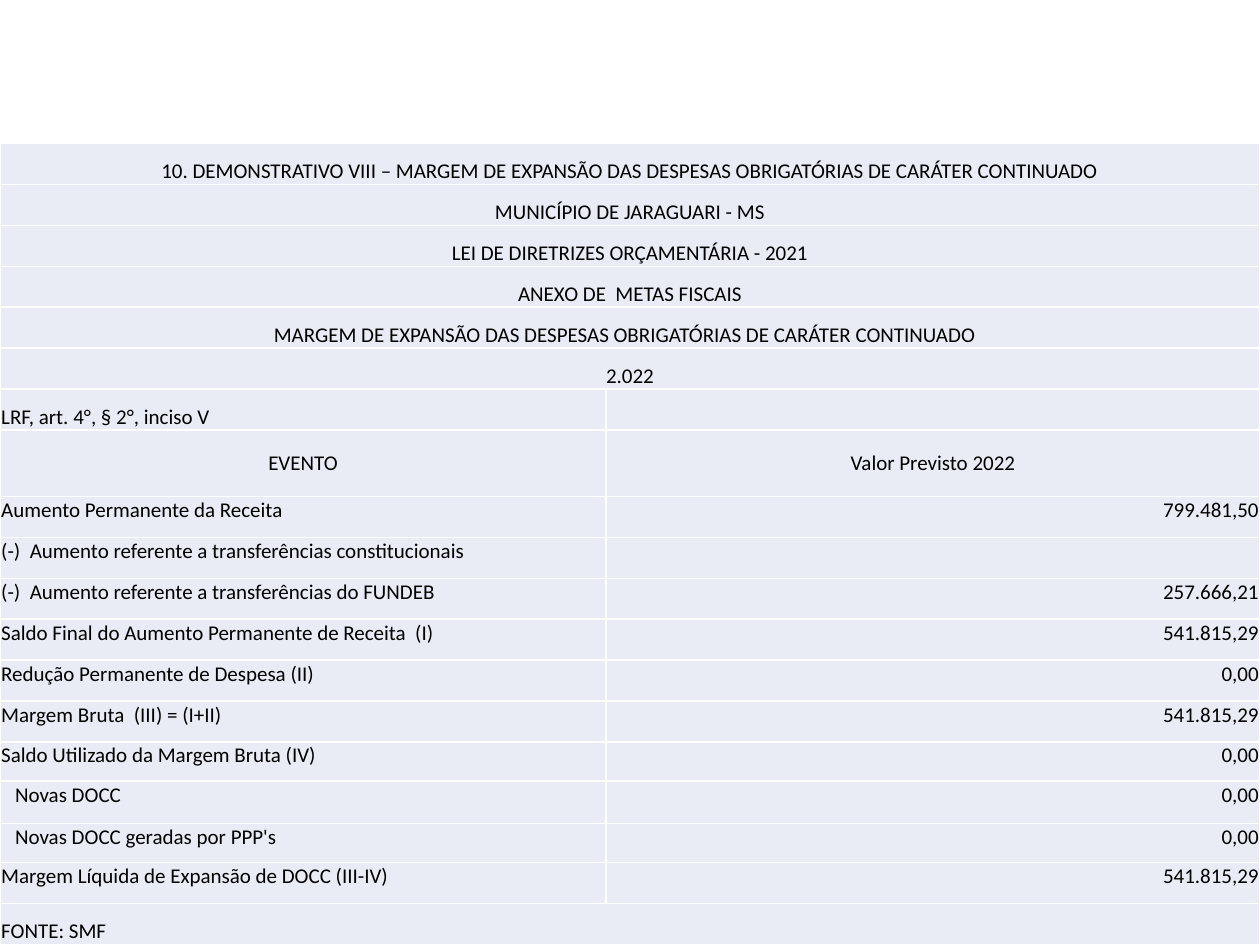
from lxml.etree import SubElement
from pptx import Presentation
from pptx.dml.color import RGBColor
from pptx.enum.text import MSO_ANCHOR, PP_ALIGN
from pptx.oxml.ns import qn
from pptx.util import Inches, Pt

COLORS = {"text": "000000", "cell": "E9EBF5", "border": "FFFFFF"}
WIDTH, HEIGHT = 10, 7.5
TABLE_TOP = 1.14
COLUMN_WIDTHS = [4.81, 5.19]
HEADER_ROW = 7
SPECIAL_HEIGHTS = {HEADER_ROW: 0.53, 14: 0.31, 15: 0.34, 16: 0.31}

TITLES = [
    "10. DEMONSTRATIVO VIII – MARGEM DE EXPANSÃO DAS DESPESAS OBRIGATÓRIAS DE CARÁTER CONTINUADO",
    "MUNICÍPIO DE JARAGUARI - MS",
    "LEI DE DIRETRIZES ORÇAMENTÁRIA - 2021",
    "ANEXO DE  METAS FISCAIS",
    "MARGEM DE EXPANSÃO DAS DESPESAS OBRIGATÓRIAS DE CARÁTER CONTINUADO",
    "2.022",
]
LEGAL_BASIS = "LRF, art. 4°, § 2°, inciso V"
HEADERS = ["EVENTO", "Valor Previsto 2022"]
EVENTS = [
    ("Aumento Permanente da Receita", "799.481,50"),
    ("(-)  Aumento referente a transferências constitucionais", ""),
    ("(-)  Aumento referente a transferências do FUNDEB", "257.666,21"),
    ("Saldo Final do Aumento Permanente de Receita  (I)", "541.815,29"),
    ("Redução Permanente de Despesa (II)", "0,00"),
    ("Margem Bruta  (III) = (I+II)", "541.815,29"),
    ("Saldo Utilizado da Margem Bruta (IV)", "0,00"),
    ("Novas DOCC", "0,00"),
    ("Novas DOCC geradas por PPP's", "0,00"),
    ("Margem Líquida de Expansão de DOCC (III-IV)", "541.815,29"),
]
SOURCE_NOTE = "FONTE: SMF"


class SlideBuilder:
    font_format = {"name": "Calibri", "size": Pt(12), "bold": False}
    cell_format = {
        "margin_left": Inches(0.01),
        "margin_right": Inches(0.01),
        "margin_top": Inches(0.01),
        "margin_bottom": 0,
    }

    def __init__(self, deck):
        self.deck = deck
        self.slide = deck.slides.add_slide(deck.slide_layouts[6])

    def table(self, top, column_shares, row_shares):
        """Add a full-width table; all lengths are shares of the slide."""
        width, height = self.deck.slide_width, self.deck.slide_height
        table = self.slide.shapes.add_table(
            len(row_shares), len(column_shares), 0, round(top * height),
            width, round(sum(row_shares) * height),
        ).table
        for column, share in zip(table.columns, column_shares):
            column.width = round(share * width)
        for row, share in zip(table.rows, row_shares):
            row.height = round(share * height)
        for cell in table.iter_cells():
            self.style_cell(cell)
        return table

    def style_cell(self, cell):
        for name, value in self.cell_format.items():
            setattr(cell, name, value)
        properties = cell._tc.get_or_add_tcPr()
        for side in ("L", "R", "T", "B"):
            line = SubElement(properties, qn(f"a:ln{side}"), w=str(Pt(1)))
            fill = SubElement(line, qn("a:solidFill"))
            SubElement(fill, qn("a:srgbClr"), val=COLORS["border"])
        cell.fill.solid()
        cell.fill.fore_color.rgb = RGBColor.from_string(COLORS["cell"])

    def cell_text(self, cell, text, align=PP_ALIGN.LEFT, anchor=MSO_ANCHOR.TOP):
        cell.text = text
        cell.vertical_anchor = anchor
        paragraph = cell.text_frame.paragraphs[0]
        paragraph.alignment = align
        for run in paragraph.runs:
            for name, value in self.font_format.items():
                setattr(run.font, name, value)
            run.font.color.rgb = RGBColor.from_string(COLORS["text"])

    def row_text(self, table, row, text, align=PP_ALIGN.LEFT):
        """Merge the whole row and set one text at its bottom."""
        first = table.cell(row, 0)
        first.merge(table.cell(row, len(table.columns) - 1))
        self.cell_text(first, text, align, MSO_ANCHOR.BOTTOM)


def main():
    deck = Presentation()
    deck.slide_width, deck.slide_height = Inches(WIDTH), Inches(HEIGHT)
    builder = SlideBuilder(deck)

    row_count = HEADER_ROW + 1 + len(EVENTS) + 1
    free_height = HEIGHT - TABLE_TOP - sum(SPECIAL_HEIGHTS.values())
    usual_height = free_height / (row_count - len(SPECIAL_HEIGHTS))
    row_shares = [SPECIAL_HEIGHTS.get(row, usual_height) / HEIGHT
                  for row in range(row_count)]
    column_shares = [width / WIDTH for width in COLUMN_WIDTHS]
    margins = builder.table(TABLE_TOP / HEIGHT, column_shares, row_shares)

    for row, title in enumerate(TITLES):
        builder.row_text(margins, row, title, PP_ALIGN.CENTER)
    margins.cell(4, 0).margin_right = Inches(0.09)
    builder.cell_text(margins.cell(len(TITLES), 0), LEGAL_BASIS,
                      anchor=MSO_ANCHOR.BOTTOM)
    for column, header in enumerate(HEADERS):
        builder.cell_text(margins.cell(HEADER_ROW, column), header,
                          PP_ALIGN.CENTER, MSO_ANCHOR.MIDDLE)
    for row, (event, value) in enumerate(EVENTS, HEADER_ROW + 1):
        builder.cell_text(margins.cell(row, 0), event)
        builder.cell_text(margins.cell(row, 1), value, PP_ALIGN.RIGHT)
        if event.startswith("Novas"):
            margins.cell(row, 0).margin_left = Inches(0.12)
    builder.row_text(margins, row_count - 1, SOURCE_NOTE)

    deck.save("out.pptx")


if __name__ == "__main__":
    main()
